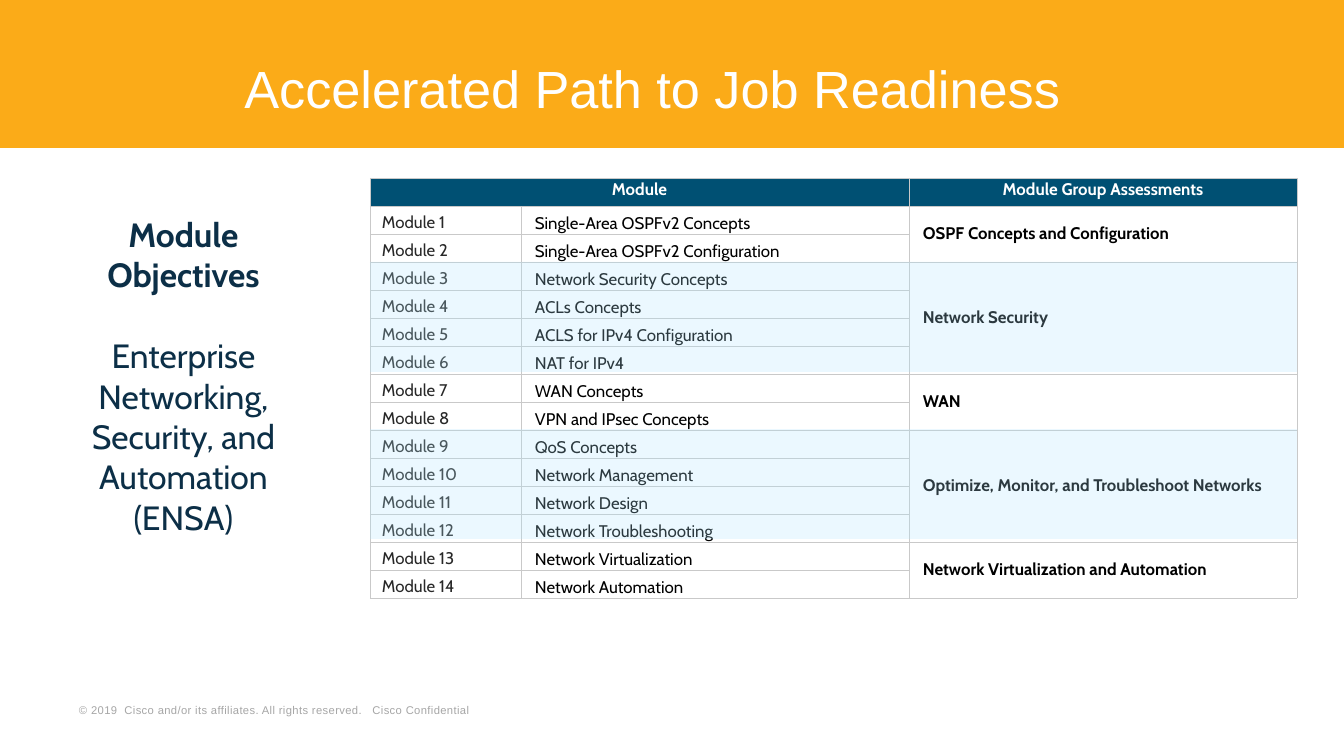
import dataclasses

import pptx
import pptx.dml.color
import pptx.enum.shapes
import pptx.enum.text
import pptx.oxml
import pptx.oxml.ns
import pptx.util

ALIGN = pptx.enum.text.PP_ALIGN
ANCHOR = pptx.enum.text.MSO_ANCHOR
EMU_PER_PX = 914400 / 134.4


@dataclasses.dataclass(frozen=True)
class Theme:
    heading_font: str = "Arial"
    body_font: str = "Cabin"
    white: str = "FFFFFF"
    black: str = "000000"
    amber: str = "FBAB18"
    header_blue: str = "005073"
    navy: str = "0C2F47"
    charcoal: str = "282828"
    tint: str = "B0E7FF"
    border: str = "C9C9C9"
    footer_grey: str = "A6A6A6"
    title_size: int = 28
    side_size: int = 18
    table_size: int = 9
    footer_size: int = 6


def px(length):
    return pptx.util.Emu(round(length * EMU_PER_PX))


def rgb(value):
    return pptx.dml.color.RGBColor.from_string(value)


class SlideBuilder:
    def __init__(self, page, theme):
        self.page = page
        self.theme = theme

    def span(self, para, text, size, color, font=None, bold=False):
        span = para.add_run()
        span.text = text
        span.font.name = font or self.theme.body_font
        span.font.size = pptx.util.Pt(size)
        span.font.bold = bold
        span.font.color.rgb = rgb(color)
        return span

    def rectangle(self, left, top, width, height, color, opacity=100):
        shape = self.page.shapes.add_shape(
            pptx.enum.shapes.MSO_SHAPE.RECTANGLE,
            px(left), px(top), px(width), px(height))
        shape.shadow.inherit = False
        shape.fill.solid()
        shape.fill.fore_color.rgb = rgb(color)
        shape.line.fill.background()
        if opacity < 100:
            fill_color = shape.element.spPr.find(".//" + pptx.oxml.ns.qn("a:srgbClr"))
            alpha = pptx.oxml.parse_xml(
                f'<a:alpha {pptx.oxml.ns.nsdecls("a")} val="{opacity * 1000}"/>')
            fill_color.append(alpha)

    def title(self, left, top, width, height, text):
        """Place the title placeholder in front of everything drawn so far."""
        box = self.page.shapes.title
        box.left, box.top, box.width, box.height = px(left), px(top), px(width), px(height)
        box.element.getparent().append(box.element)
        box.text_frame.vertical_anchor = ANCHOR.MIDDLE
        para = box.text_frame.paragraphs[0]
        para.alignment = ALIGN.LEFT
        para.line_spacing = 0.8
        self.span(para, text, self.theme.title_size, self.theme.white,
                  self.theme.heading_font)

    def text_frame(self, left, top, width, height):
        box = self.page.shapes.add_textbox(px(left), px(top), px(width), px(height))
        box.text_frame.word_wrap = True
        return box.text_frame

    def side_heading(self, left, top, width, height, heading_lines, course):
        frame = self.text_frame(left, top, width, height)
        for index, text in enumerate([*heading_lines, course]):
            para = frame.paragraphs[0] if index == 0 else frame.add_paragraph()
            para.alignment = ALIGN.CENTER
            is_course = index == len(heading_lines)
            if is_course:
                para.space_before = pptx.util.Pt(22)
            self.span(para, text, self.theme.side_size, self.theme.navy,
                      bold=not is_course)

    def footer(self, left, top, width, height, text):
        frame = self.text_frame(left, top, width, height)
        frame.vertical_anchor = ANCHOR.BOTTOM
        frame.margin_left = frame.margin_right = px(9)
        frame.margin_top = frame.margin_bottom = px(4)
        span = self.span(frame.paragraphs[0], text, self.theme.footer_size,
                         self.theme.footer_grey, self.theme.heading_font)
        span.font.language_id = None
        span.font._element.set("spc", "20")

    def cell_style(self, cell, color):
        properties = cell._tc.get_or_add_tcPr()
        for side in ("lnL", "lnR", "lnT", "lnB"):
            properties.append(pptx.oxml.parse_xml(
                f'<a:{side} {pptx.oxml.ns.nsdecls("a")} w="3175"><a:solidFill>'
                f'<a:srgbClr val="{self.theme.border}"/></a:solidFill></a:{side}>'))
        cell.fill.solid()
        cell.fill.fore_color.rgb = rgb(color)
        cell.margin_left = cell.margin_right = cell.margin_top = cell.margin_bottom = 0

    def cell_text(self, cell, text, color, inset=0, anchor=ANCHOR.MIDDLE,
                  bold=False, align=ALIGN.LEFT, line_points=None):
        cell.vertical_anchor = anchor
        cell.margin_left = px(inset)
        para = cell.text_frame.paragraphs[0]
        para.alignment = align
        if line_points:
            para.line_spacing = pptx.util.Pt(line_points)
        self.span(para, text, self.theme.table_size, color, bold=bold)

    def module_table(self, left, top, widths, row_height, headers, groups):
        theme = self.theme
        row_count = 1 + sum(len(modules) for _, modules in groups)
        table = self.page.shapes.add_table(
            row_count, len(widths), px(left), px(top),
            px(sum(widths)), px(row_height * row_count)).table
        table.horz_banding = False
        for column, width in zip(table.columns, widths):
            column.width = px(width)
        for index, row in enumerate(table.rows):
            row.height = px(row_height)
            for cell in row.cells:
                self.cell_style(cell, theme.white if index else theme.header_blue)

        table.cell(0, 0).merge(table.cell(0, 1))
        for column, text in zip((0, 2), headers):
            self.cell_text(table.cell(0, column), text, theme.white, bold=True,
                           align=ALIGN.CENTER, line_points=8)
        number = 1
        for assessment, modules in groups:
            group_cell = table.cell(number, 2)
            group_cell.merge(table.cell(number + len(modules) - 1, 2))
            self.cell_text(group_cell, assessment, theme.black, inset=14, bold=True)
            for module in modules:
                self.cell_text(table.cell(number, 0), f"Module {number}",
                               theme.charcoal, inset=12, line_points=14)
                self.cell_text(table.cell(number, 1), module, theme.black,
                               inset=14, anchor=ANCHOR.BOTTOM)
                number += 1


GROUPS = [
    ("OSPF Concepts and Configuration",
     ["Single-Area OSPFv2 Concepts", "Single-Area OSPFv2 Configuration"]),
    ("Network Security",
     ["Network Security Concepts", "ACLs Concepts",
      "ACLS for IPv4 Configuration", "NAT for IPv4"]),
    ("WAN", ["WAN Concepts", "VPN and IPsec Concepts"]),
    ("Optimize, Monitor, and Troubleshoot Networks",
     ["QoS Concepts", "Network Management", "Network Design",
      "Network Troubleshooting"]),
    ("Network Virtualization and Automation",
     ["Network Virtualization", "Network Automation"]),
]


def main():
    deck = pptx.Presentation()
    deck.slide_width, deck.slide_height = px(1344), px(756)
    page = deck.slides.add_slide(deck.slide_layouts[5])
    theme = Theme()
    builder = SlideBuilder(page, theme)

    builder.footer(70, 698, 500, 23,
                   "© 2019  Cisco and/or its affiliates. All rights reserved.   "
                   "Cisco Confidential")
    left, top, widths, row_height = 370, 178, (151, 388, 388), 28
    builder.module_table(left, top, widths, row_height,
                         ("Module", "Module Group Assessments"), GROUPS)
    builder.rectangle(0, 0, 1344, 148, theme.amber)
    builder.title(231, 47, 1066, 93, "Accelerated Path to Job Readiness")
    builder.side_heading(70, 207, 227, 339, ("Module", "Objectives"),
                         "Enterprise Networking, Security, and Automation (ENSA)")
    for tint_top in (262, 429):
        builder.rectangle(left, tint_top, sum(widths), 110, theme.tint, opacity=25)
    deck.save("out.pptx")


if __name__ == "__main__":
    main()
